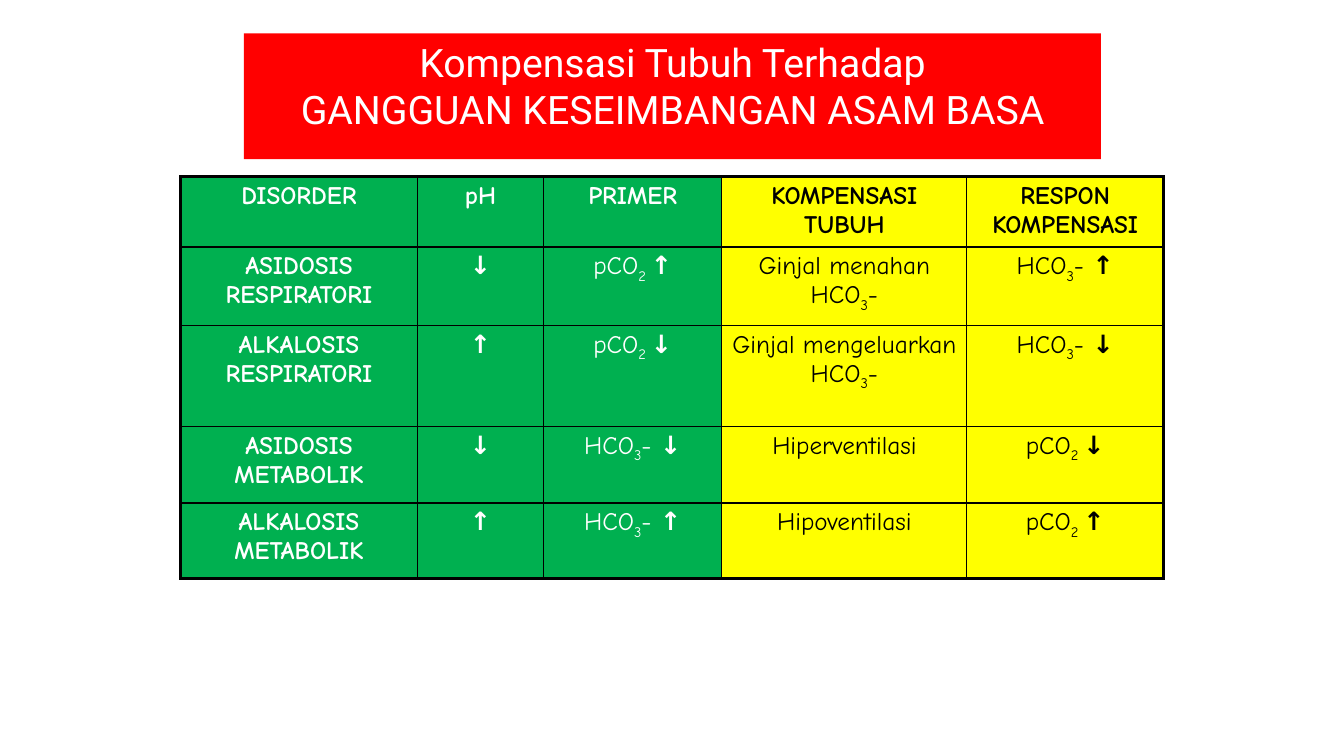
"""Build a slide on how the body compensates for acid-base disorders."""
from dataclasses import dataclass

from lxml.etree import SubElement
from pptx import Presentation
from pptx.dml.color import RGBColor as Color
from pptx.enum.shapes import MSO_SHAPE as Shape
from pptx.enum.text import MSO_ANCHOR as Anchor, PP_ALIGN as Align
from pptx.oxml.ns import qn
from pptx.util import Inches, Pt


@dataclass(frozen=True)
class Theme:
    red: str = "FF0000"
    green: str = "00B050"
    yellow: str = "FFFF00"
    white: str = "FFFFFF"
    black: str = "000000"
    title_font: str = "Roboto"
    table_font: str = "Comic Neue"
    title_size: float = 28
    table_size: float = 18
    inner_line: float = 1
    outer_line: float = 2.25


THEME = Theme()
TITLE = ("Kompensasi Tubuh Terhadap", "GANGGUAN KESEIMBANGAN ASAM BASA")
COLUMN_WIDTHS = (2.35, 1.25, 1.77, 2.43, 1.95)
ROW_HEIGHTS = (0.7, 0.78, 1, 0.76, 0.75)
DISORDERS = (
    ("DISORDER", "pH", "PRIMER", "KOMPENSASI TUBUH", "RESPON KOMPENSASI"),
    ("ASIDOSIS RESPIRATORI", "↓", "pCO|2 |↑", "Ginjal menahan HCO|3|-", "HCO|3|- |↑"),
    ("ALKALOSIS RESPIRATORI", "↑", "pCO|2 |↓", "Ginjal mengeluarkan HCO|3|-", "HCO|3|- |↓"),
    ("ASIDOSIS METABOLIK", "↓", "HCO|3|- |↓", "Hiperventilasi", "pCO|2 |↓"),
    ("ALKALOSIS METABOLIK", "↑", "HCO|3|- |↑", "Hipoventilasi", "pCO|2 |↑"),
)


def add_span(para, text, font_name, size, color, bold=False):
    """Add one formatted run to a paragraph."""
    span = para.add_run()
    span.text = text
    span.font.name = font_name
    span.font.size = Pt(size)
    span.font.bold = bold
    span.font.color.rgb = Color.from_string(color)
    return span


def add_title(page):
    """Add the red title box with its two lines."""
    box = page.shapes.add_shape(
        Shape.RECTANGLE, Inches(2.42), Inches(0.33), Inches(8.5), Inches(1.25))
    box.shadow.inherit = False
    box.fill.solid()
    box.fill.fore_color.rgb = Color.from_string(THEME.red)
    box.line.fill.background()
    box.text_frame.word_wrap = True
    box.text_frame.vertical_anchor = Anchor.TOP
    para = box.text_frame.paragraphs[0]
    para.alignment = Align.CENTER
    for index, line in enumerate(TITLE):
        if index:
            para.add_line_break()
        add_span(para, line, THEME.title_font, THEME.title_size, THEME.white)


def set_borders(cell, outer_sides):
    """Draw four black borders, thicker where the cell meets the table edge."""
    properties = cell._tc.get_or_add_tcPr()
    for side, outer in zip("LRTB", outer_sides):
        width = THEME.outer_line if outer else THEME.inner_line
        line = SubElement(properties, qn(f"a:ln{side}"), w=str(Pt(width)))
        fill = SubElement(line, qn("a:solidFill"))
        SubElement(fill, qn("a:srgbClr"), val=THEME.black)


def fill_cell(cell, content, fill, color, bold):
    """Colour a cell and write its text, lowering digits and bolding arrows."""
    cell.fill.solid()
    cell.fill.fore_color.rgb = Color.from_string(fill)
    para = cell.text_frame.paragraphs[0]
    para.alignment = Align.CENTER
    for text in content.split("|"):
        span = add_span(para, text, THEME.table_font, THEME.table_size,
                        color, bold or text in ("↑", "↓"))
        if text.strip().isdigit():
            span.font._element.set("baseline", "-25000")


def add_disorder_table(page):
    """Add the table of disorders and the compensating responses."""
    rows, columns = len(ROW_HEIGHTS), len(COLUMN_WIDTHS)
    table = page.shapes.add_table(
        rows, columns, Inches(1.79), Inches(1.75),
        Inches(sum(COLUMN_WIDTHS)), Inches(sum(ROW_HEIGHTS))).table
    for column, width in zip(table.columns, COLUMN_WIDTHS):
        column.width = Inches(width)
    for row, height in zip(table.rows, ROW_HEIGHTS):
        row.height = Inches(height)
    for row, contents in enumerate(DISORDERS):
        for column, content in enumerate(contents):
            cell = table.cell(row, column)
            set_borders(cell, (column == 0, column == columns - 1,
                               row == 0, row == rows - 1))
            fill, color = ((THEME.green, THEME.white) if column < 3
                           else (THEME.yellow, THEME.black))
            fill_cell(cell, content, fill, color, row == 0 or column < 2)


def main():
    """Build and save the slide."""
    deck = Presentation()
    deck.slide_width, deck.slide_height = Inches(13.33), Inches(7.5)
    page = deck.slides.add_slide(deck.slide_layouts[6])
    add_title(page)
    add_disorder_table(page)
    deck.save("out.pptx")


if __name__ == "__main__":
    main()
